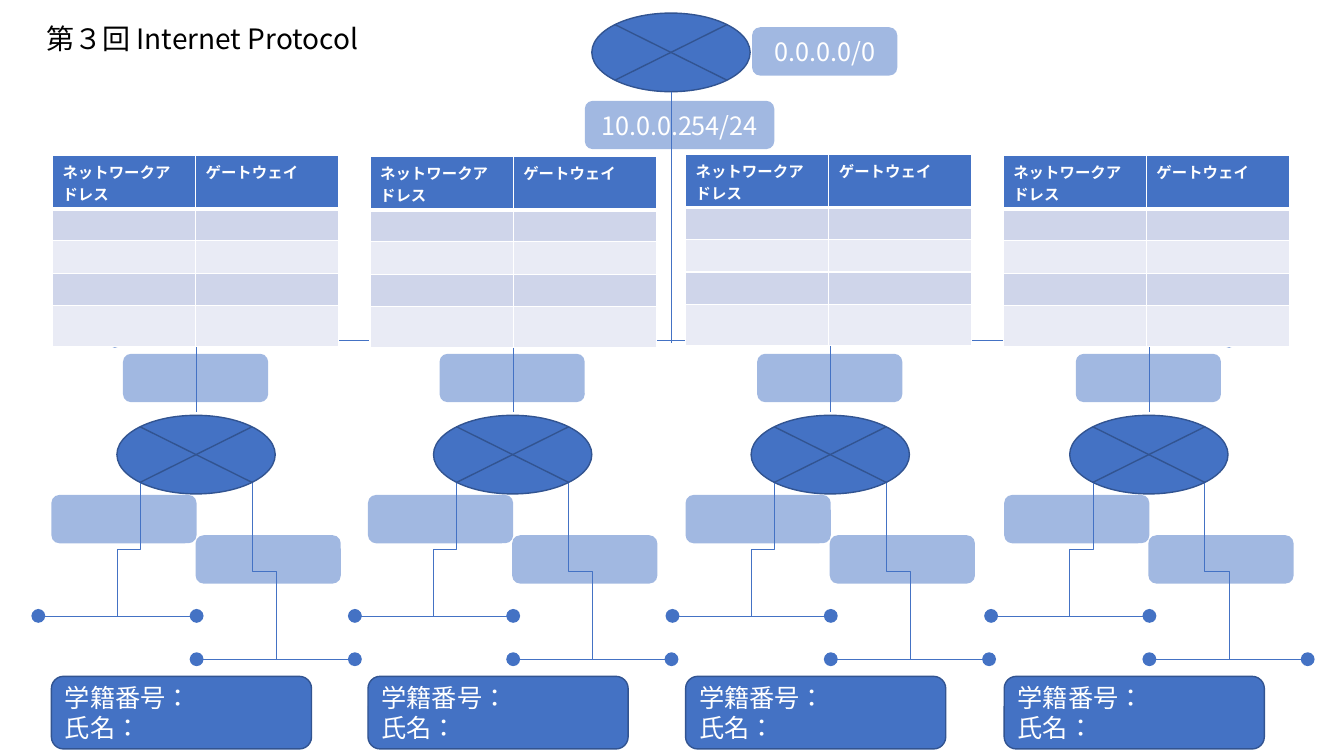
"""Build the Internet Protocol lesson slide: four routers, their networks and routing tables."""
from lxml import etree
from pptx import Presentation
from pptx.dml.color import RGBColor
from pptx.enum.lang import MSO_LANGUAGE_ID
from pptx.enum.shapes import MSO_CONNECTOR, MSO_SHAPE
from pptx.enum.text import MSO_ANCHOR, PP_ALIGN
from pptx.oxml.ns import qn
from pptx.util import Inches, Pt

ROUTER = MSO_SHAPE.FLOWCHART_SUMMING_JUNCTION
ROUNDED = MSO_SHAPE.ROUNDED_RECTANGLE
STRAIGHT, ELBOW = MSO_CONNECTOR.STRAIGHT, MSO_CONNECTOR.ELBOW
MIDDLE = MSO_ANCHOR.MIDDLE
LEFT, CENTER = PP_ALIGN.LEFT, PP_ALIGN.CENTER
JAPANESE = MSO_LANGUAGE_ID.JAPANESE

FONT = "Noto Sans CJK JP"
BLUE, OUTLINE, WHITE, BLACK = "4472C4", "325491", "FFFFFF", "000000"
BANDS = ["CFD5EA", "E9EBF5"]

TITLE = "第３回 Internet Protocol"
ROOT_ADDRESSES = [("10.0.0.254/24", 5.8, 1, 1.88), ("0.0.0.0/0", 7.46, 0.27, 1.44)]
STUDENT_FIELDS = ["学籍番号：", "氏名："]
TABLE_HEADINGS = ["ネットワークアドレス", "ゲートウェイ"]
ROW_HEIGHTS = [0.53, 0.32, 0.32, 0.32, 0.41]
COLUMN_WIDTH = 1.42
TABLE_PLACES = [(0.52, 1.54), (3.67, 1.55), (6.8, 1.53), (9.95, 1.54)]
NETWORK_OFFSETS = [0, 3.14, 6.29, 9.45]

ROUTER_SIZE = (1.57, 0.78)
ADDRESS_HEIGHT = 0.48
ADDRESS_WIDTH = 1.44
ADDRESS_PLACES = [(0.51, 4.91), (1.94, 5.31), (1.22, 3.51)]
SEGMENTS = [(0.38, 6.11), (1.95, 6.54)]
SEGMENT_LENGTH = 1.57
DROPS = [(1.39, 4.79, 1.16, 6.11), (2.5, 4.79, 2.74, 6.54)]


def color(hex_code):
    return RGBColor.from_string(hex_code)


def add_font(properties):
    for tag in ("a:latin", "a:ea"):
        etree.SubElement(properties, qn(tag), typeface=FONT)


def write(frame, lines, size, ink, align=LEFT, bold=False):
    for index, line in enumerate(lines):
        paragraph = frame.paragraphs[0] if index == 0 else frame.add_paragraph()
        paragraph.alignment = align
        run = paragraph.add_run()
        run.text = line
        run.font.language_id = JAPANESE
        run.font.size = Pt(size)
        run.font.bold = bold
        run.font.color.rgb = color(ink)
        add_font(run.font._element)


def add_box(shapes, kind, left, top, width, height):
    box = shapes.add_shape(kind, Inches(left), Inches(top), Inches(width), Inches(height))
    box.shadow.inherit = False
    box.fill.solid()
    box.fill.fore_color.rgb = color(BLUE)
    box.line.color.rgb = color(OUTLINE)
    box.line.width = Pt(1)
    box.text_frame.vertical_anchor = MIDDLE
    return box


def add_address(shapes, left, top, width=ADDRESS_WIDTH, text=None):
    box = add_box(shapes, ROUNDED, left, top, width, ADDRESS_HEIGHT)
    box.line.fill.background()
    solid = box._element.spPr.find(qn("a:solidFill"))
    etree.SubElement(solid[0], qn("a:alpha"), val="50000")
    if text:
        write(box.text_frame, [text], 18, WHITE, CENTER)


def add_wire(shapes, x1, y1, x2, y2, kind=STRAIGHT, dotted=False):
    wire = shapes.add_connector(kind, Inches(x1), Inches(y1), Inches(x2), Inches(y2))
    wire.line.color.rgb = color(BLUE)
    wire.line.width = Pt(0.5)
    if dotted:
        for tag in ("a:headEnd", "a:tailEnd"):
            etree.SubElement(wire.line._get_or_add_ln(), qn(tag),
                             type="oval", w="lg", len="lg")
    etree.SubElement(wire._element.spPr, qn("a:effectLst"))
    return wire


def add_drop(shapes, x1, y1, x2, y2):
    middle_x, middle_y = (x1 + x2) / 2, (y1 + y2) / 2
    half_run = (y2 - y1) / 2
    half_step = abs(x2 - x1) / 2
    side, turn = (1, 270) if x2 > x1 else (-1, 90)
    drop = add_wire(shapes, middle_x + side * half_run, middle_y - half_step,
                    middle_x - side * half_run, middle_y + half_step, ELBOW)
    drop._element.spPr.find(qn("a:xfrm")).set("rot", str(turn * 60000))


def add_network(slide, offset):
    shapes = slide.shapes.add_group_shape().shapes
    add_box(shapes, ROUTER, 1.16 + offset, 4.12, *ROUTER_SIZE)
    for left, y in SEGMENTS:
        start = left + offset
        add_wire(shapes, start, y, start + SEGMENT_LENGTH, y, dotted=True)
    for x1, y1, x2, y2 in DROPS:
        add_drop(shapes, x1 + offset, y1, x2 + offset, y2)
    student = add_box(shapes, ROUNDED, 0.51 + offset, 6.71, 2.58, 0.72)
    write(student.text_frame, STUDENT_FIELDS, 18, WHITE)
    add_wire(shapes, 1.95 + offset, 3.4, 1.95 + offset, 4.09)
    for left, top in ADDRESS_PLACES:
        add_address(shapes, left + offset, top)


def style_cell(cell, fill, bottom):
    properties = cell._tc.get_or_add_tcPr()
    for tag, points in (("a:lnL", 1), ("a:lnR", 1), ("a:lnT", 1), ("a:lnB", bottom)):
        border = etree.SubElement(properties, qn(tag), w=str(Pt(points)))
        solid = etree.SubElement(border, qn("a:solidFill"))
        etree.SubElement(solid, qn("a:srgbClr"), val=WHITE)
    cell.fill.solid()
    cell.fill.fore_color.rgb = color(fill)


def add_routing_table(slide, left, top):
    table = slide.shapes.add_table(
        len(ROW_HEIGHTS), len(TABLE_HEADINGS), Inches(left), Inches(top),
        Inches(COLUMN_WIDTH * len(TABLE_HEADINGS)), Inches(sum(ROW_HEIGHTS))).table
    for column in table.columns:
        column.width = Inches(COLUMN_WIDTH)
    for index, height in enumerate(ROW_HEIGHTS):
        table.rows[index].height = Inches(height)
        for position, heading in enumerate(TABLE_HEADINGS):
            cell = table.cell(index, position)
            if index == 0:
                style_cell(cell, BLUE, 3)
                write(cell.text_frame, [heading], 11, WHITE, bold=True)
            else:
                style_cell(cell, BANDS[(index - 1) % 2], 1)
                paragraph = cell.text_frame.paragraphs[0]._p
                add_font(etree.SubElement(paragraph, qn("a:endParaRPr"), sz="1100"))


def main():
    deck = Presentation()
    deck.slide_width, deck.slide_height = Inches(13.33), Inches(7.5)
    slide = deck.slides.add_slide(deck.slide_layouts[6])

    title = slide.shapes.add_textbox(Inches(0.36), Inches(0.22), Inches(4.73), Inches(0.37))
    title.text_frame.word_wrap = True
    title.text_frame.vertical_anchor = MIDDLE
    write(title.text_frame, [TITLE], 20, BLACK)
    title.text_frame.paragraphs[0].line_spacing = 0.9

    add_wire(slide.shapes, 1.14, 3.38, 12.19, 3.38, dotted=True)
    add_box(slide.shapes, ROUTER, 5.87, 0.13, *ROUTER_SIZE)
    add_wire(slide.shapes, 6.66, 0.91, 6.66, 3.4)
    for text, left, top, width in ROOT_ADDRESSES:
        add_address(slide.shapes, left, top, width, text)
    for offset in NETWORK_OFFSETS:
        add_network(slide, offset)
    for left, top in TABLE_PLACES:
        add_routing_table(slide, left, top)

    deck.save("out.pptx")


if __name__ == "__main__":
    main()
